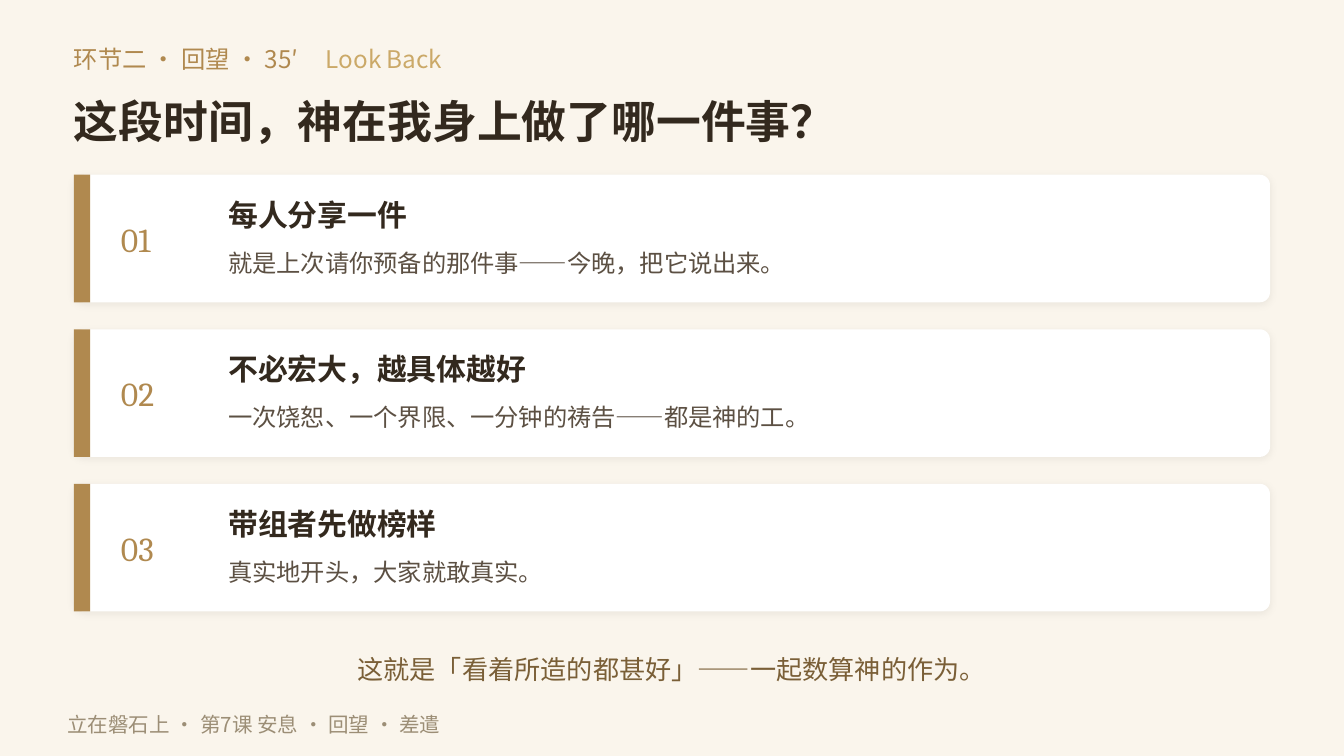
from dataclasses import dataclass

from lxml.etree import SubElement
from pptx import Presentation
from pptx.dml.color import RGBColor
from pptx.enum.shapes import MSO_SHAPE as Preset
from pptx.enum.text import MSO_ANCHOR as Anchor, PP_ALIGN as Align
from pptx.oxml.ns import qn
from pptx.util import Pt

COLORS = {
    "cream": "FAF5EC", "white": "FFFFFF", "shadow": "000000",
    "gold": "B0894F", "light_gold": "CBA968", "ink": "33291E",
    "body": "5C5043", "bronze": "7A5F37", "footer": "9C8E76",
}
SANS, SERIF = "Noto Sans CJK SC", "Cambria"
LEFT, WIDTH = 39.6, 640.8
CARD_TOP, CARD_HEIGHT, CARD_PITCH = 93.6, 68.4, 82.8


@dataclass(frozen=True)
class Area:
    left: float
    top: float
    width: float
    height: float

    def lengths(self) -> tuple:
        return Pt(self.left), Pt(self.top), Pt(self.width), Pt(self.height)


@dataclass(frozen=True)
class Style:
    size: float
    color: str
    font: str = SANS
    bold: bool = False
    align: Align = Align.LEFT


@dataclass(frozen=True)
class Card:
    number: str
    title: str
    detail: str


EYEBROW = Style(13, "gold")
HEADLINE = Style(24, "ink", bold=True)
NUMBER = Style(18, "gold", font=SERIF)
CARD_TITLE = Style(16, "ink", bold=True)
CARD_DETAIL = Style(13, "body")
CLOSING = Style(14, "bronze", align=Align.CENTER)
FOOTER = Style(11, "footer")

CARDS = [
    Card("01", "每人分享一件", "就是上次请你预备的那件事——今晚，把它说出来。"),
    Card("02", "不必宏大，越具体越好", "一次饶恕、一个界限、一分钟的祷告——都是神的工。"),
    Card("03", "带组者先做榜样", "真实地开头，大家就敢真实。"),
]


def rgb(name: str) -> RGBColor:
    return RGBColor.from_string(COLORS[name])


def add_panel(slide, area: Area, color: str, preset=Preset.RECTANGLE):
    panel = slide.shapes.add_shape(preset, *area.lengths())
    panel.shadow.inherit = False
    panel.fill.solid()
    panel.fill.fore_color.rgb = rgb(color)
    panel.line.fill.background()
    return panel


def add_soft_shadow(panel) -> None:
    """Fill the panel's empty effect list with a faint outer shadow."""
    effects = panel._element.spPr.find(qn("a:effectLst"))
    shadow = SubElement(effects, qn("a:outerShdw"), blurRad=str(Pt(4)),
                        dist=str(Pt(1)), dir=str(135 * 60000),
                        algn="bl", rotWithShape="0")
    color = SubElement(shadow, qn("a:srgbClr"), val=COLORS["shadow"])
    SubElement(color, qn("a:alpha"), val="6000")


def add_text(slide, area: Area, text: str, style: Style, tab: float = 0):
    """Add one styled paragraph, with a tab stop if tab is given."""
    box = slide.shapes.add_textbox(*area.lengths())
    frame = box.text_frame
    frame.word_wrap = True
    frame.vertical_anchor = Anchor.MIDDLE
    frame.margin_left = frame.margin_right = 0
    frame.margin_top = frame.margin_bottom = 0
    para = frame.paragraphs[0]
    para.alignment = style.align
    properties = para._p.get_or_add_pPr()
    if tab:
        stops = SubElement(properties, qn("a:tabLst"))
        SubElement(stops, qn("a:tab"), pos=str(Pt(tab)), algn="l")
    para.add_run().text = text
    para.font.size = Pt(style.size)
    para.font.bold = style.bold
    para.font.color.rgb = rgb(style.color)
    para.font.name = style.font
    SubElement(properties.find(qn("a:defRPr")), qn("a:ea"), typeface=style.font)
    return para


def add_card(slide, card: Card, top: float) -> None:
    panel = add_panel(slide, Area(LEFT, top, WIDTH, CARD_HEIGHT), "white",
                      Preset.ROUNDED_RECTANGLE)
    panel.adjustments[0] = 0.08
    add_soft_shadow(panel)
    add_panel(slide, Area(LEFT, top, 8.64, CARD_HEIGHT), "gold")
    add_text(slide, Area(64.8, top + 10.8, 50.4, 46.8), card.number, NUMBER)
    add_text(slide, Area(122.4, top + 8.64, 525.6, 25.2), card.title, CARD_TITLE)
    add_text(slide, Area(122.4, top + 34.56, 525.6, 25.2), card.detail, CARD_DETAIL)


def main() -> None:
    deck = Presentation()
    deck.slide_width, deck.slide_height = Pt(720), Pt(405)
    slide = deck.slides.add_slide(deck.slide_layouts[6])
    add_panel(slide, Area(0, 0, 720, 405), "cream")

    eyebrow = add_text(slide, Area(LEFT, 20.16, 612, 23.04),
                       "环节二 · 回望 · 35′\t", EYEBROW, tab=135)
    span = eyebrow.add_run()
    span.text = "Look Back"
    span.font.color.rgb = rgb("light_gold")
    add_text(slide, Area(LEFT, 50.4, 648, 28.8),
             "这段时间，神在我身上做了哪一件事？", HEADLINE)

    for index, card in enumerate(CARDS):
        add_card(slide, card, CARD_TOP + index * CARD_PITCH)

    add_text(slide, Area(LEFT, 345.6, WIDTH, 25.2),
             "这就是「看着所造的都甚好」——一起数算神的作为。", CLOSING)
    add_text(slide, Area(36, 378, 540, 20.16),
             "立在磐石上 · 第7课 安息 · 回望 · 差遣", FOOTER)
    deck.save("out.pptx")


if __name__ == "__main__":
    main()
